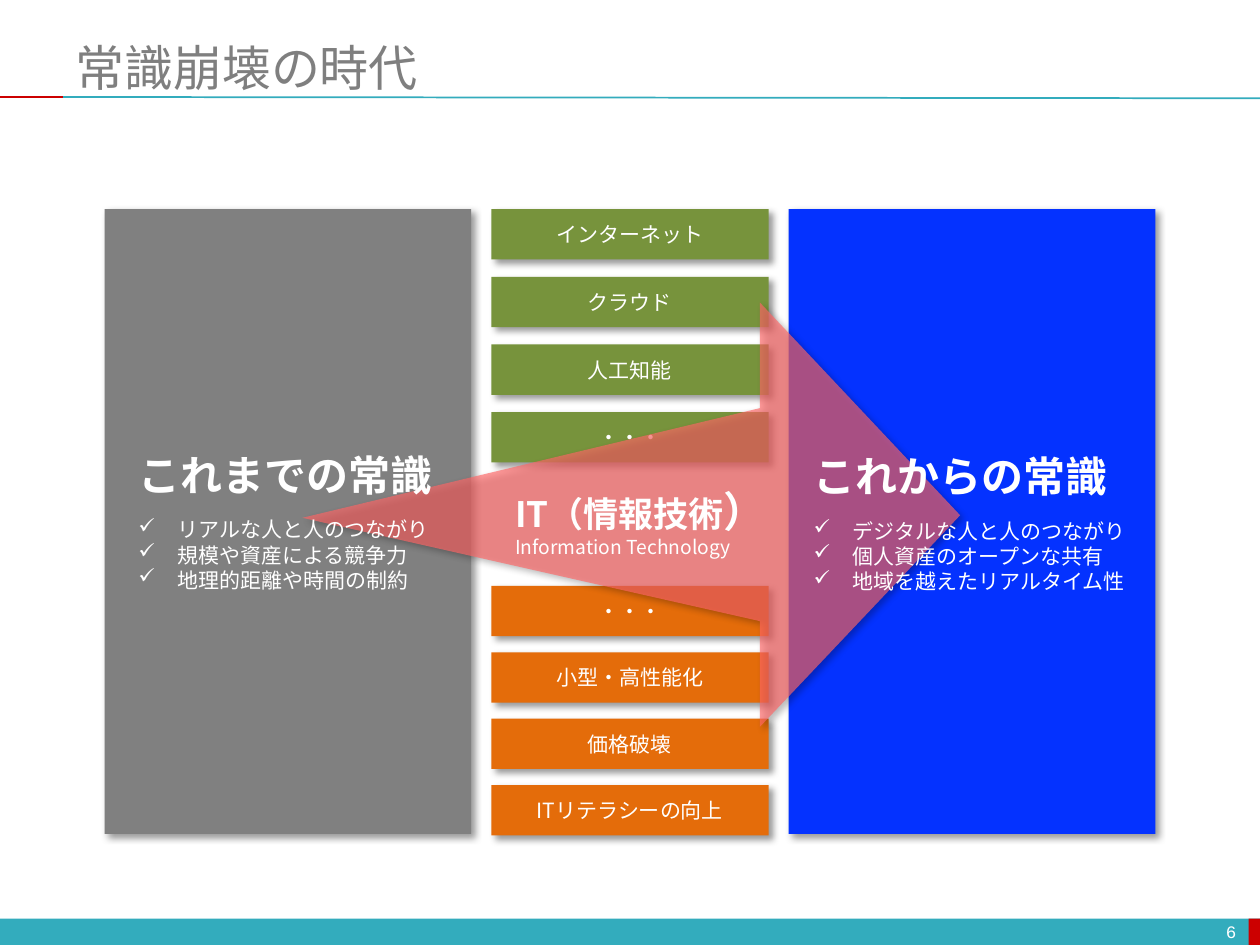
from lxml.etree import SubElement
from pptx import Presentation
from pptx.dml.color import RGBColor
from pptx.enum.shapes import MSO_CONNECTOR, MSO_SHAPE
from pptx.enum.text import MSO_ANCHOR, MSO_AUTO_SIZE, PP_ALIGN
from pptx.oxml.ns import qn
from pptx.util import Inches, Pt

THEME = {
    "teal": "33ACBD", "red": "CC0000", "green": "77933C", "orange": "E46C0A",
    "gray": "808080", "blue": "0432FF", "arrow": "FF6666", "shadow": "000000",
    "title": "7F7F7F", "white": "FFFFFF",
    "body_font": "Noto Sans CJK JP", "title_font": "Calibri", "number_font": "Courier New",
    "title_size": 28, "heading_size": 24, "it_size": 20, "body_size": 12,
    "caption_size": 11, "number_size": 10, "line_ratio": 1.2,
}

TITLE = "常識崩壊の時代"
PAGE_NUMBER = "6"
FOOTER = [("teal", (0, 7.29, 10, 0.22)), ("red", (9.91, 7.29, 0.1, 0.22))]
RULES = [("teal", (0.5, 0.77, 10, 0.78)), ("red", (0, 0.77, 0.5, 0.77))]
DRIVERS = [
    ("green", 1.66, 0.537, ["インターネット", "クラウド", "人工知能", "・・・"]),
    ("orange", 4.65, 0.527, ["・・・", "小型・高性能化", "価格破壊", "ITリテラシーの向上"]),
]
ERAS = [
    ("gray", 0.83, (1, 3.52, 2.56, 1.25), "これまでの常識",
     ["リアルな人と人のつながり", "規模や資産による競争力", "地理的距離や時間の制約"]),
    ("blue", 6.26, (6.36, 3.53, 2.71, 1.25), "これからの常識",
     ["デジタルな人と人のつながり", "個人資産のオープンな共有", "地域を越えたリアルタイム性"]),
]
IT_HEADING = [("IT（情報技術", "it_size"), ("）", "heading_size")]
IT_CAPTION = "Information Technology"
ARROW = [(2.4, 4.11), (6.03, 3.24), (6.03, 2.4), (7.62, 4.09), (6.03, 5.77), (6.03, 4.93)]


def color(name):
    return RGBColor.from_string(THEME[name])


def apply_format(target, **values):
    for attribute, value in values.items():
        setattr(target, attribute, value)


def paint(shape, fill, shadowed=False):
    shape.shadow.inherit = False
    shape.fill.solid()
    shape.fill.fore_color.rgb = color(fill)
    shape.line.fill.background()
    if shadowed:
        effects = shape.element.spPr.find(qn("a:effectLst"))
        shadow = SubElement(effects, qn("a:outerShdw"), blurRad=str(Pt(4)), dist=str(Pt(3)),
                            dir="2700000", algn="tl", rotWithShape="0")
        tint = SubElement(shadow, qn("a:srgbClr"), val=THEME["shadow"])
        SubElement(tint, qn("a:alpha"), val="40000")


def add_block(slide, fill, box, shadowed=False):
    block = slide.shapes.add_shape(MSO_SHAPE.RECTANGLE, *map(Inches, box))
    paint(block, fill, shadowed)
    return block


def add_run(paragraph, text, size, font="body_font", ink="white", bold=False):
    run = paragraph.add_run()
    run.text = text
    apply_format(run.font, size=Pt(THEME[size]), name=THEME[font], bold=bold)
    run.font.color.rgb = color(ink)
    SubElement(run.font._element, qn("a:ea"), typeface=THEME["body_font"])


def set_line_height(paragraph, size):
    paragraph.line_spacing = Pt(THEME[size] * THEME["line_ratio"])


def add_label(slide, box):
    frame = slide.shapes.add_textbox(*map(Inches, box)).text_frame
    apply_format(frame, word_wrap=False, auto_size=MSO_AUTO_SIZE.SHAPE_TO_FIT_TEXT)
    return frame


def add_centred_line(slide, box, text, size, font, ink, alignment):
    frame = slide.shapes.add_textbox(*map(Inches, box)).text_frame
    apply_format(frame, word_wrap=True, vertical_anchor=MSO_ANCHOR.MIDDLE)
    frame.paragraphs[0].alignment = alignment
    add_run(frame.paragraphs[0], text, size, font, ink)


def add_checked_item(frame, text):
    paragraph = frame.add_paragraph()
    properties = paragraph._p.get_or_add_pPr()
    for name, inches in {"marL": 0.31, "indent": -0.31}.items():
        properties.set(name, str(Inches(inches)))
    SubElement(properties, qn("a:buChar"), char="✓")
    set_line_height(paragraph, "body_size")
    add_run(paragraph, text, "body_size")
    return paragraph


def add_frame(slide):
    for fill, box in FOOTER:
        add_block(slide, fill, box)
    for ink, ends in RULES:
        rule = slide.shapes.add_connector(MSO_CONNECTOR.STRAIGHT, *map(Inches, ends))
        rule.line.color.rgb = color(ink)
        rule.line.width = Pt(1)
        SubElement(rule._element.spPr, qn("a:effectLst"))
    add_centred_line(slide, (0.5, 0.3, 9.5, 0.46), TITLE, "title_size", "title_font",
                     "title", PP_ALIGN.LEFT)
    add_centred_line(slide, (7.58, 7.27, 2.33, 0.24), PAGE_NUMBER, "number_size",
                     "number_font", "white", PP_ALIGN.RIGHT)


def add_drivers(slide):
    for fill, top, pitch, names in DRIVERS:
        for row, name in enumerate(names):
            driver = add_block(slide, fill, (3.9, top + row * pitch, 2.2, 0.4), True)
            driver.text_frame.vertical_anchor = MSO_ANCHOR.MIDDLE
            paragraph = driver.text_frame.paragraphs[0]
            paragraph.alignment = PP_ALIGN.CENTER
            add_run(paragraph, name, "body_size")


def add_arrow(slide):
    tail, *outline = [(Inches(x), Inches(y)) for x, y in ARROW]
    builder = slide.shapes.build_freeform(*tail)
    builder.add_line_segments(outline, close=True)
    arrow = builder.convert_to_shape()
    paint(arrow, "arrow", True)
    tint = arrow.element.spPr.find(qn("a:solidFill")).find(qn("a:srgbClr"))
    SubElement(tint, qn("a:alpha"), val="66000")


def add_era_text(slide, box, heading, points):
    frame = add_label(slide, box)
    set_line_height(frame.paragraphs[0], "heading_size")
    add_run(frame.paragraphs[0], heading, "heading_size", bold=True)
    items = [add_checked_item(frame, point) for point in points]
    items[0].space_before = Pt(9.6)


def add_it_text(slide):
    frame = add_label(slide, (3.99, 3.8, 2.27, 0.69))
    heading, caption = frame.paragraphs[0], frame.add_paragraph()
    set_line_height(heading, "heading_size")
    for text, size in IT_HEADING:
        add_run(heading, text, size, bold=True)
    set_line_height(caption, "caption_size")
    add_run(caption, IT_CAPTION, "caption_size")


def main():
    deck = Presentation()
    apply_format(deck, slide_width=Inches(10), slide_height=Inches(7.5))
    slide = deck.slides.add_slide(deck.slide_layouts[6])
    add_frame(slide)
    add_drivers(slide)
    for fill, left, *_ in ERAS:
        add_block(slide, fill, (left, 1.66, 2.91, 4.96), True)
    add_arrow(slide)
    for _, _, box, heading, points in ERAS:
        add_era_text(slide, box, heading, points)
    add_it_text(slide)
    deck.save("out.pptx")


if __name__ == "__main__":
    main()
